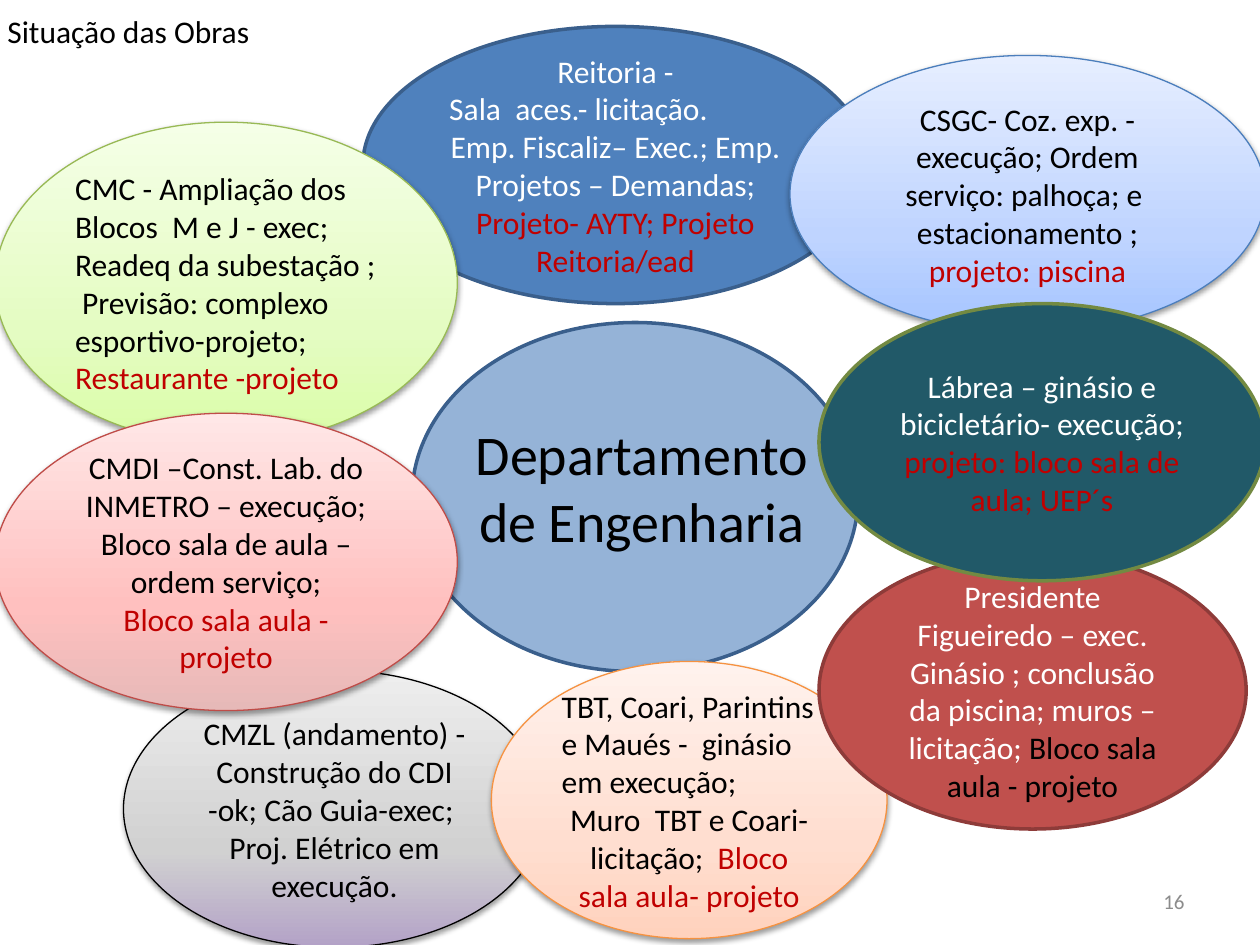
"""Build the slide on the status of building works around the engineering department."""
from copy import deepcopy

from lxml import etree
from pptx import Presentation
from pptx import util as u
from pptx.dml.color import RGBColor
from pptx.enum import shapes, text
from pptx.oxml import ns

COLORS = {
    "black": "000000", "white": "FFFFFF", "red": "C00000", "gray": "8C8C8C",
    "blue": "4F81BD", "light blue": "95B3D7", "navy": "3A5F8C",
    "brick": "C0504D", "maroon": "8E3B39", "teal": "215968", "olive": "738A42",
    "orange": "F69240", "sky": "4B7EBC", "lime": "98B955", "rose": "BF4C48",
}
GRADIENTS = {
    "silver": ("B3A2C7", "D1D1D1", "EEEEEE"),
    "peach": ("FFD2BD", "FFDED0", "FFF2ED"),
    "ice": ("A4C4FF", "BFD4FF", "E6EEFF"),
    "mint": ("DAFDA7", "E4FCC2", "F5FFE7"),
    "pink": ("E6B9B8", "FFC0BF", "FFE7E7"),
}
LEFT, CENTER, RIGHT = text.PP_ALIGN.LEFT, text.PP_ALIGN.CENTER, text.PP_ALIGN.RIGHT
MIDDLE, TOP = text.MSO_ANCHOR.MIDDLE, text.MSO_ANCHOR.TOP


def write(holder, paragraphs, size=18, anchor=MIDDLE):
    """Fill a shape with paragraphs given as (alignment, [(words, color), ...])."""
    frame = holder.text_frame
    frame.word_wrap = True
    frame.vertical_anchor = anchor
    for index, (align, runs) in enumerate(paragraphs):
        paragraph = frame.add_paragraph() if index else frame.paragraphs[0]
        paragraph.alignment = align
        for words, color in runs:
            run = paragraph.add_run()
            run.text = words
            run.font.name = "Calibri"
            run.font.size = u.Pt(size)
            run.font.color.rgb = RGBColor.from_string(COLORS[color])


def shade(bubble, gradient):
    """Give a bubble a bottom-to-top gradient and a soft shadow."""
    bubble.fill.gradient()
    bubble.fill.gradient_angle = 90
    stops = bubble.element.spPr.find(".//" + ns.qn("a:gsLst"))
    stops.append(deepcopy(stops[-1]))
    for stop, position, color in zip(bubble.fill.gradient_stops, (0, 0.35, 1), GRADIENTS[gradient]):
        stop.position = position
        stop.color.rgb = RGBColor.from_string(color)
    effects = bubble.element.spPr.find(ns.qn("a:effectLst"))
    shadow = etree.SubElement(effects, ns.qn("a:outerShdw"), blurRad="40000", dist="20000",
                              dir="5400000", rotWithShape="0")
    black = etree.SubElement(shadow, ns.qn("a:srgbClr"), val=COLORS["black"])
    etree.SubElement(black, ns.qn("a:alpha"), val="38000")


prs = Presentation()
prs.slide_width, prs.slide_height = u.Inches(10), u.Inches(7.5)
slide = prs.slides.add_slide(prs.slide_layouts[6])

bubbles = [
    ((3.27, 2.56, 3.54, 2.77), "light blue", "navy", []),
    ((0.98, 5.32, 3.35, 2.2), "silver", "black", [
        (CENTER, [("CMZL (andamento) - Construção do CDI -ok; Cão Guia-exec;  "
                   "Proj. Elétrico em execução.", "black")])]),
    ((2.88, 0.21, 4.01, 2.2), "blue", "navy", [
        (CENTER, [("Reitoria -", "white")]),
        (LEFT, [("Sala  aces.- licitação.", "white")]),
        (CENTER, [("Emp. Fiscaliz– Exec.; Emp. Projetos – Demandas; ", "white"),
                  ("Projeto- AYTY; Projeto Reitoria/ead", "red")])]),
    ((3.9, 5.25, 3.14, 2.2), "peach", "orange", [
        (LEFT, [("TBT, Coari, Parintins e Maués -  ginásio em execução;", "black")]),
        (CENTER, [("Muro  TBT e Coari- licitação;  ", "black"),
                  ("Bloco sala aula- projeto", "red")])]),
    ((6.5, 4.38, 3.39, 2.2), "brick", "maroon", [
        (CENTER, [("Presidente Figueiredo – exec. Ginásio ; conclusão da piscina; "
                   "muros –licitação; ", "white"),
                  ("Bloco sala aula - projeto", "black")])]),
    ((6.27, 0.44, 3.77, 2.2), "ice", "sky", [
        (CENTER, [("CSGC- Coz. exp. - execução; Ordem serviço: palhoça; e  "
                   "estacionamento ; ", "black"),
                  ("projeto: piscina", "red")])]),
    ((6.5, 2.41, 3.54, 2.2), "teal", "olive", [
        (CENTER, [("Lábrea – ginásio e bicicletário- execução; ", "white"),
                  ("projeto: bloco sala de aula; UEP´s", "red")])]),
    ((-0.04, 0.97, 3.67, 2.55), "mint", "lime", [
        (LEFT, [("CMC - Ampliação dos Blocos  M e J - exec; Readeq da subestação ;  "
                 "Previsão: complexo esportivo-projeto; ", "black"),
                ("Restaurante -projeto", "red")])]),
    ((-0.04, 3.28, 3.67, 2.36), "pink", "rose", [
        (CENTER, [("CMDI –Const. Lab. do INMETRO – execução; Bloco sala de aula –"
                   "ordem serviço;", "black")]),
        (CENTER, [("Bloco sala aula - projeto", "red")])]),
]
labels = {
    "brick": ((3.46, 3.28, 3.27, 1.18), "Departamento de Engenharia", CENTER, 32, "black", TOP),
    "pink": ((-0.04, 0.05, 2.91, 0.4), "Situação das Obras", LEFT, 18, "black", TOP),
    "light blue": ((7.17, 6.95, 2.33, 0.4), "16", RIGHT, 12, "gray", MIDDLE),
}

for place, fill, outline, paragraphs in bubbles:
    if fill == "brick":
        box, words, align, size, color, anchor = labels["brick"]
        department = slide.shapes.add_textbox(*map(u.Inches, box))
        write(department, [(align, [(words, color)])], size=size, anchor=anchor)
    bubble = slide.shapes.add_shape(shapes.MSO_SHAPE.OVAL, *map(u.Inches, place))
    bubble.shadow.inherit = False
    if fill in GRADIENTS:
        shade(bubble, fill)
    else:
        bubble.fill.solid()
        bubble.fill.fore_color.rgb = RGBColor.from_string(COLORS[fill])
    bubble.line.color.rgb = RGBColor.from_string(COLORS[outline])
    bubble.line.width = u.Pt(0.75 if fill in GRADIENTS else 2)
    write(bubble, paragraphs)

for name in ("pink", "light blue"):
    box, words, align, size, color, anchor = labels[name]
    label = slide.shapes.add_textbox(*map(u.Inches, box))
    write(label, [(align, [(words, color)])], size=size, anchor=anchor)

prs.save("out.pptx")
